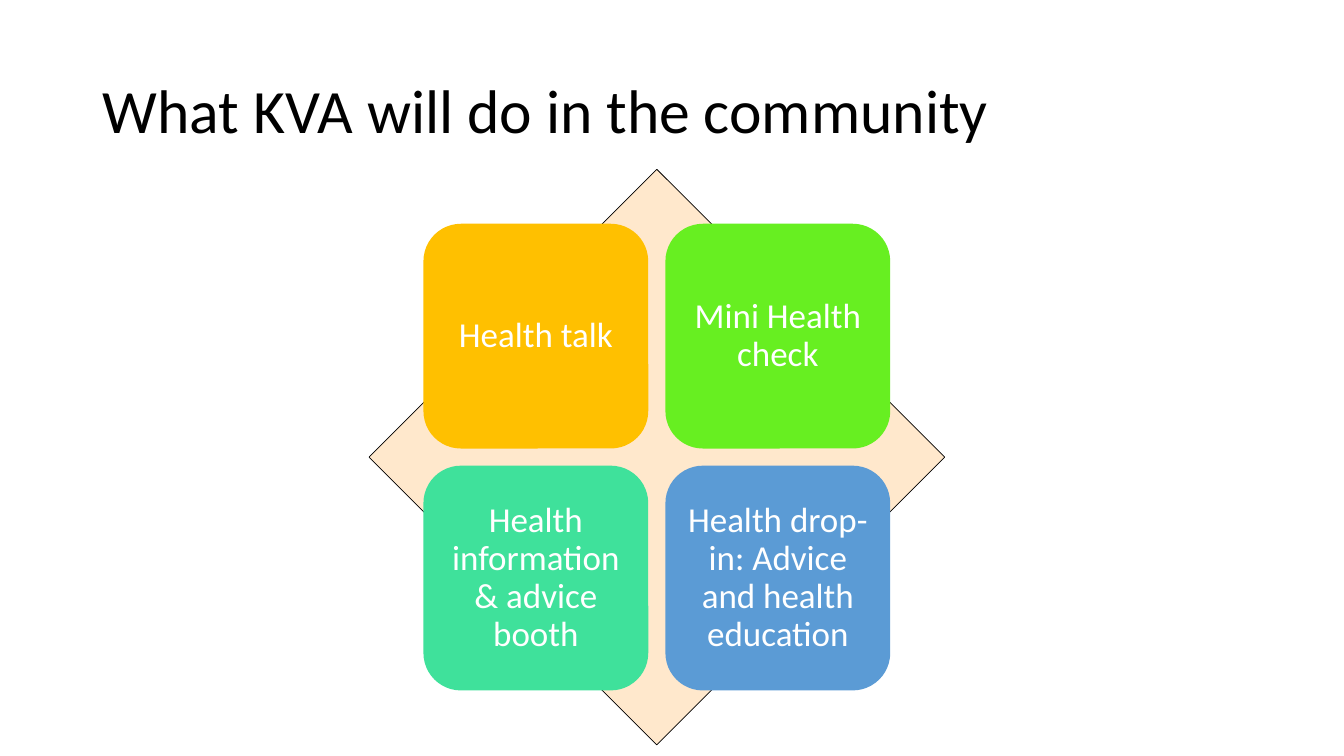
import dataclasses

import pptx
import pptx.dml.color
import pptx.enum.shapes
import pptx.enum.text
import pptx.util

SHAPES = pptx.enum.shapes.MSO_SHAPE
ALIGN = pptx.enum.text.PP_ALIGN


@dataclasses.dataclass(frozen=True)
class Theme:
    """Colours, font and type sizes of the slide."""
    font: str = "Calibri"
    title_size: int = 44
    card_size: int = 25
    ink: str = "000000"
    card_ink: str = "FFFFFF"
    diamond: str = "FFE8CC"
    cards: tuple = ("FFC000", "67EF21", "3FE19B", "5B9BD5")


@dataclasses.dataclass(frozen=True)
class Matrix:
    """Grid of square cards around a common centre, in inches."""
    center_x: float = 6.515
    center_y: float = 4.535
    diamond: float = 5.71
    card: float = 2.23
    pitch: float = 2.4
    columns: int = 2

    def card_center(self, index):
        """Return the centre of the card at a reading-order index."""
        row, column = divmod(index, self.columns)
        middle = (self.columns - 1) / 2
        return (self.center_x + (column - middle) * self.pitch,
                self.center_y + (row - middle) * self.pitch)


class SlideBuilder:
    """Holds the theme, the grid and the current slide."""

    def __init__(self, presentation, theme, matrix):
        """Add a title-only slide to the presentation."""
        self.theme = theme
        self.matrix = matrix
        self.slide = presentation.slides.add_slide(presentation.slide_layouts[5])

    def label(self, shape, text, size, color, alignment):
        """Set and format the text of a shape."""
        frame = shape.text_frame
        frame.text = text
        frame.word_wrap = True
        frame.auto_size = pptx.enum.text.MSO_AUTO_SIZE.NONE
        frame.vertical_anchor = pptx.enum.text.MSO_ANCHOR.MIDDLE
        paragraph = frame.paragraphs[0]
        paragraph.alignment = alignment
        paragraph.line_spacing = 0.9
        font = paragraph.runs[0].font
        font.name = self.theme.font
        font.size = pptx.util.Pt(size)
        font.color.rgb = pptx.dml.color.RGBColor.from_string(color)

    def title(self, text):
        """Place and fill the title placeholder."""
        shape = self.slide.shapes.title
        shape.left, shape.top, shape.width, shape.height = map(
            pptx.util.Inches, (0.92, 0.4, 11.5, 1.45))
        self.label(shape, text, self.theme.title_size, self.theme.ink, ALIGN.LEFT)

    def square(self, kind, center, side, fill):
        """Add a filled shape of equal sides around a centre."""
        left, top = (position - side / 2 for position in center)
        shape = self.slide.shapes.add_shape(
            kind, *map(pptx.util.Inches, (left, top, side, side)))
        shape.shadow.inherit = False
        shape.fill.solid()
        shape.fill.fore_color.rgb = pptx.dml.color.RGBColor.from_string(fill)
        shape.line.fill.background()
        return shape

    def diamond(self):
        """Add the outlined diamond behind the cards."""
        center = (self.matrix.center_x, self.matrix.center_y)
        shape = self.square(SHAPES.DIAMOND, center, self.matrix.diamond,
                            self.theme.diamond)
        shape.line.color.rgb = pptx.dml.color.RGBColor.from_string(self.theme.ink)
        shape.line.width = pptx.util.Pt(0.5)

    def card(self, index, text):
        """Add one rounded card with its label."""
        shape = self.square(SHAPES.ROUNDED_RECTANGLE, self.matrix.card_center(index),
                            self.matrix.card, self.theme.cards[index])
        frame = shape.text_frame
        frame.margin_left = frame.margin_right = pptx.util.Inches(0.1)
        frame.margin_top = frame.margin_bottom = pptx.util.Inches(0.1)
        self.label(shape, text, self.theme.card_size, self.theme.card_ink, ALIGN.CENTER)


def main():
    """Build and save the slide."""
    presentation = pptx.Presentation()
    presentation.slide_width = pptx.util.Inches(13.33)
    presentation.slide_height = pptx.util.Inches(7.5)
    builder = SlideBuilder(presentation, Theme(), Matrix())
    builder.title("What KVA will do in the community")
    builder.diamond()
    activities = ("Health talk", "Mini Health check", "Health information & advice booth",
                  "Health drop-in: Advice and health education")
    for index, activity in enumerate(activities):
        builder.card(index, activity)
    presentation.save("out.pptx")


if __name__ == "__main__":
    main()
